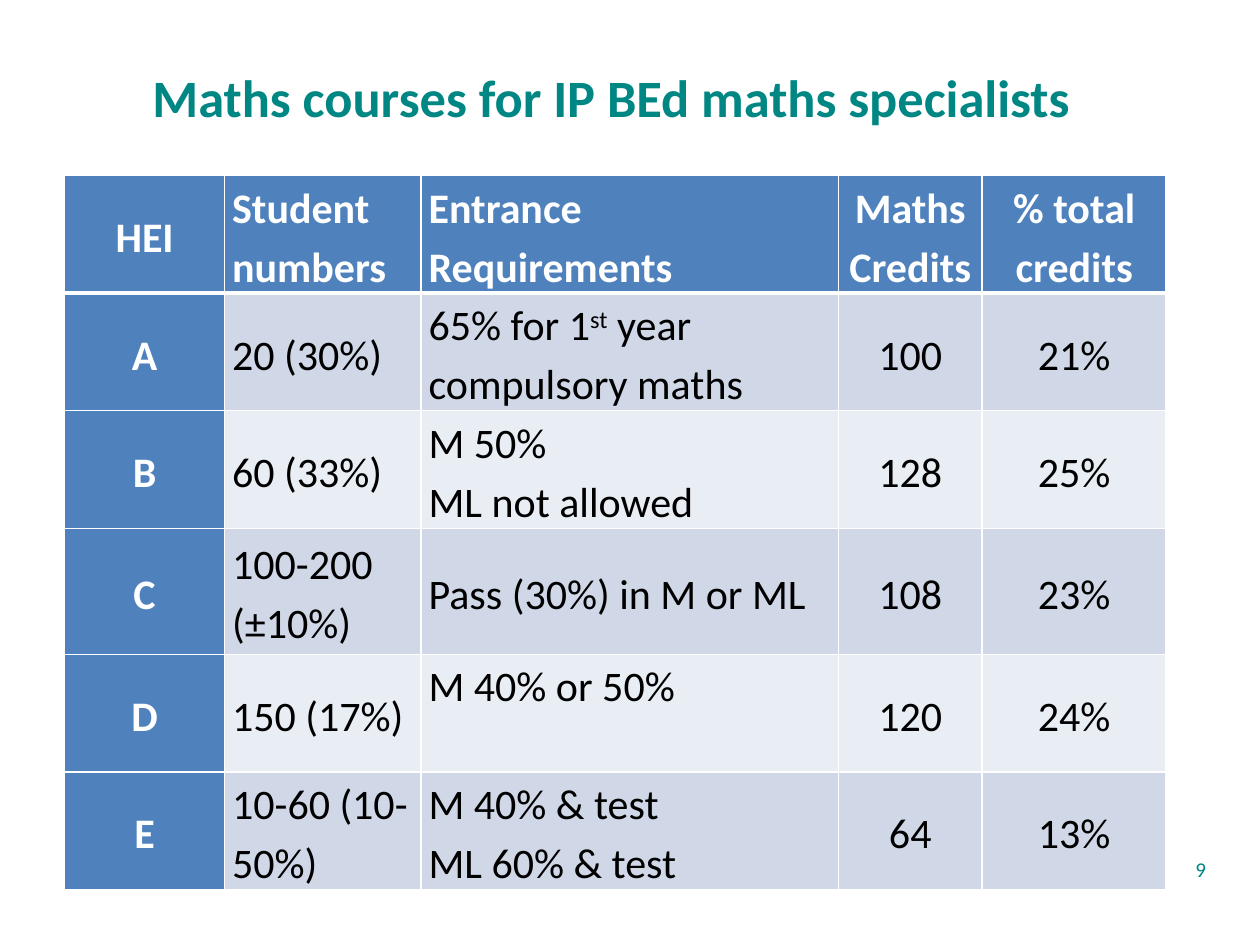
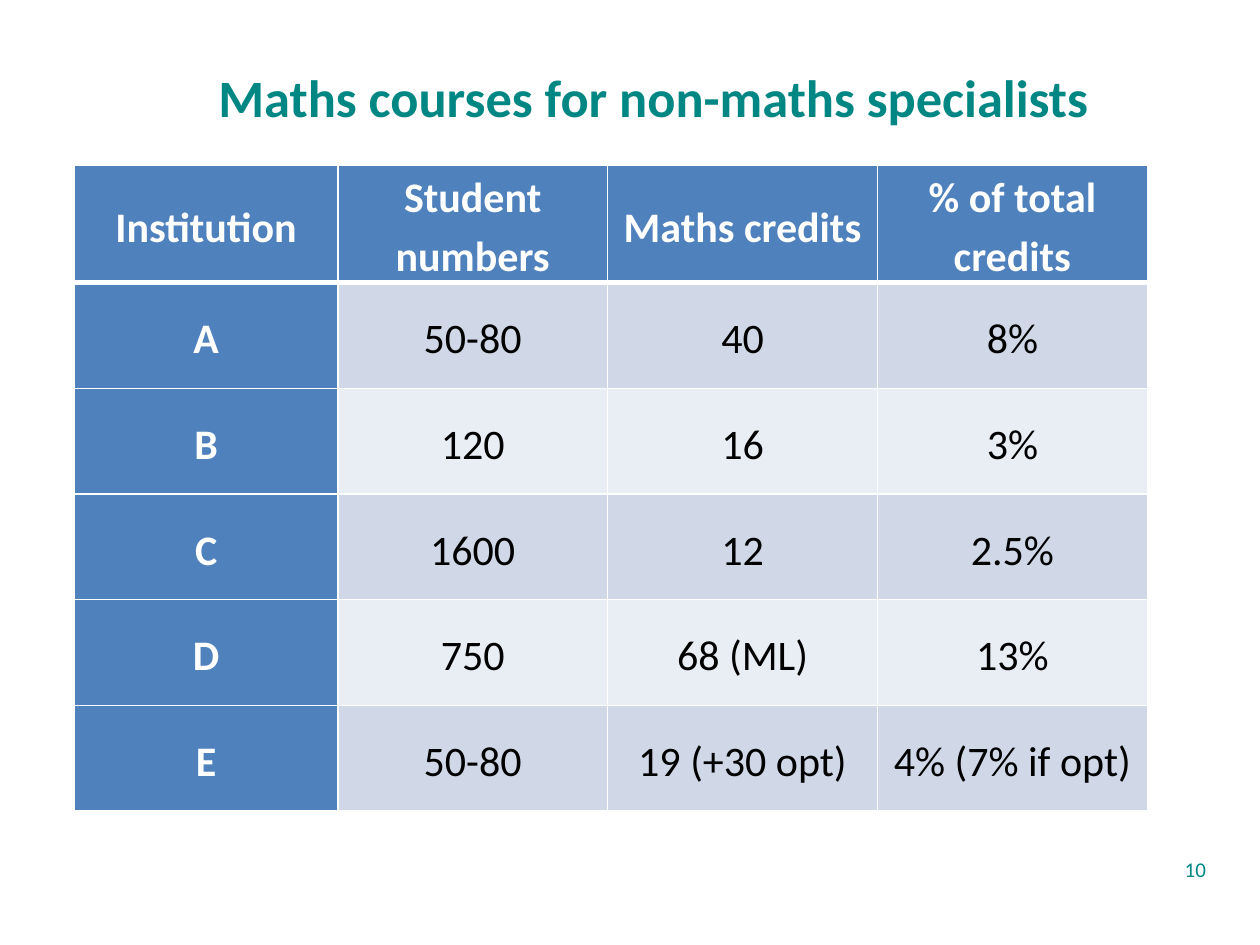
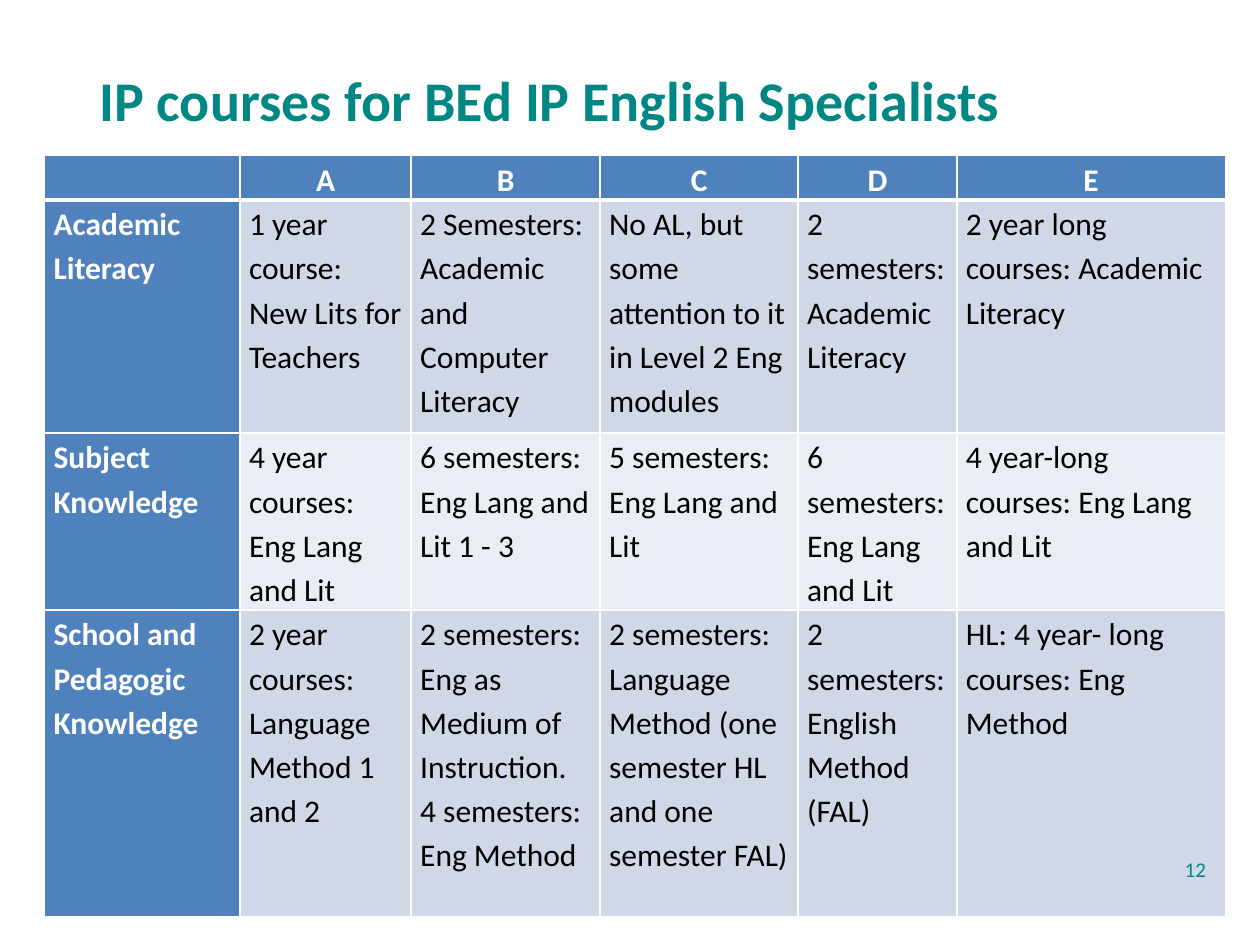
from lxml import etree
from pptx import Presentation
from pptx.dml.color import RGBColor
from pptx.enum import text
from pptx.oxml import ns
from pptx.util import Cm, Pt

FONT = "Calibri"
TEAL, BLUE, WHITE, BLACK = "008784", "4F81BD", "FFFFFF", "000000"
BANDS = ["D0D8E8", "E9EDF4"]
ALIGN = {"l": text.PP_ALIGN.LEFT, "c": text.PP_ALIGN.CENTER, "r": text.PP_ALIGN.RIGHT}
TOP, MIDDLE = text.MSO_ANCHOR.TOP, text.MSO_ANCHOR.MIDDLE


def color(value):
    return RGBColor.from_string(value)


def add_run(p, content, size, fill, bold=False):
    r = p.add_run()
    r.text = content
    r.font.name, r.font.size, r.font.bold = FONT, Pt(size), bold
    r.font.color.rgb = color(fill)
    return r


def add_title(s, content, width, size=30, align="c"):
    sp = s.shapes.title
    sp.left, sp.top, sp.width, sp.height = Cm(1.75), Cm(1.19), Cm(width), Cm(1.55)
    tf = sp.text_frame
    tf.word_wrap = True
    tf.auto_size = text.MSO_AUTO_SIZE.SHAPE_TO_FIT_TEXT
    tf.vertical_anchor = TOP
    p = tf.paragraphs[0]
    p.alignment = ALIGN[align]
    add_run(p, content, size, TEAL, True)


def add_page_number(s, number):
    tf = s.shapes.add_textbox(Cm(18.64), Cm(17.15), Cm(5.92), Cm(0.76)).text_frame
    tf.word_wrap = True
    tf.vertical_anchor = MIDDLE
    p = tf.paragraphs[0]
    p.alignment = ALIGN["r"]
    add_run(p, str(number), 12, TEAL)


def set_borders(cell, top, bottom):
    """Draw white cell borders; top and bottom are widths in points."""
    tcPr = cell._tc.get_or_add_tcPr()
    for side, width in (("L", 1), ("R", 1), ("T", top), ("B", bottom)):
        ln = etree.SubElement(tcPr, ns.qn(f"a:ln{side}"), w=str(Pt(width)))
        fill = etree.SubElement(ln, ns.qn("a:solidFill"))
        etree.SubElement(fill, ns.qn("a:srgbClr"), val=WHITE)


def fill_cell(cell, content, size, ink, bold, align):
    """Write lines as paragraphs; text between ^ marks is superscript."""
    tf = cell.text_frame
    for i, line in enumerate(content.split("\n")):
        p = tf.add_paragraph() if i else tf.paragraphs[0]
        p.alignment, p.line_spacing = ALIGN[align], 1.15
        p.font.size = Pt(size)
        for j, part in enumerate(line.split("^")):
            if part:
                r = add_run(p, part, size, ink, bold)
                if j % 2:
                    r.font._element.set("baseline", "30000")


def add_grid(s, left, top, widths, heights, rows, aligns, header_aligns=None,
             size=24, inset=0.18, anchor=MIDDLE):
    """Add a table with a blue header row and column and banded body rows."""
    table = s.shapes.add_table(len(rows), len(widths), Cm(left), Cm(top),
                               Cm(sum(widths)), Cm(sum(heights))).table
    table.first_col = True
    for column, width in zip(table.columns, widths):
        column.width = Cm(width)
    for row, height in zip(table.rows, heights):
        row.height = Cm(height)
    for i, row in enumerate(rows):
        row_aligns = aligns if i else header_aligns or aligns
        for j, content in enumerate(row):
            cell = table.cell(i, j)
            heading = i == 0 or j == 0
            cell.margin_left = cell.margin_right = Cm(inset)
            cell.margin_top = cell.margin_bottom = 0
            cell.vertical_anchor = anchor
            set_borders(cell, 3 if i == 1 else 1, 3 if i == 0 else 1)
            cell.fill.solid()
            cell.fill.fore_color.rgb = color(BLUE if heading else BANDS[(i - 1) % 2])
            fill_cell(cell, content, size, WHITE if heading else BLACK, heading, row_aligns[j])
    return table


def specialists_slide(s):
    add_title(s, "Maths courses for IP BEd maths specialists", 21.16)
    rows = [
        ["HEI", "Student numbers", "Entrance Requirements", "Maths Credits", "% total credits"],
        ["A", "20 (30%)", "65% for 1^st^ year compulsory maths", "100", "21%"],
        ["B", "60 (33%)", "M 50%\nML not allowed", "128", "25%"],
        ["C", "100-200 (±10%)", "Pass (30%) in M or ML", "108", "23%"],
        ["D", "150 (17%)", "M 40% or 50%", "120", "24%"],
        ["E", "10-60 (10-50%)", "M 40% & test\nML 60% & test", "64", "13%"],
    ]
    table = add_grid(s, 1.3, 3.54, [3.23, 3.96, 8.41, 2.9, 3.71],
                     [2.37, 2.37, 2.37, 2.54, 2.37, 2.37], rows, "cllcc", inset=0.15)
    table.cell(4, 2).vertical_anchor = TOP
    add_page_number(s, 9)


def non_specialists_slide(s):
    add_title(s, "Maths courses for non-maths specialists", 22.86)
    rows = [
        ["Institution", "Student numbers", "Maths credits", "% of total credits"],
        ["A", "50-80", "40", "8%"],
        ["B", "120", "16", "3%"],
        ["C", "1600", "12", "2.5%"],
        ["D", "750", "68 (ML)", "13%"],
        ["E", "50-80", "19 (+30 opt)", "4% (7% if opt)"],
    ]
    add_grid(s, 1.5, 3.33, [5.31] + [5.44] * 3, [2.37] + [2.13] * 5, rows, "cccc")
    add_page_number(s, 10)


def english_slide(s):
    add_title(s, "IP courses for BEd IP English Specialists", 22.86, 32, "l")
    rows = [
        ["", "A", "B", "C", "D", "E"],
        ["Academic Literacy", "1 year course: New Lits for Teachers",
         "2 Semesters:\nAcademic and Computer Literacy",
         "No AL, but some attention to it in Level 2 Eng modules",
         "2 semesters: Academic Literacy", "2 year long courses: Academic Literacy"],
        ["Subject Knowledge", "4 year courses: Eng Lang and Lit",
         "6 semesters: Eng Lang and Lit 1 - 3", "5 semesters: Eng Lang and Lit",
         "6 semesters: Eng Lang and Lit", "4 year-long courses: Eng Lang and Lit"],
        ["School and Pedagogic Knowledge", "2 year courses: Language Method 1 and 2",
         "2 semesters: Eng as Medium of Instruction.\n4 semesters: Eng Method",
         "2 semesters: Language Method (one semester HL and one semester FAL)",
         "2 semesters: English Method (FAL)", "HL: 4 year- long courses: Eng Method"],
    ]
    add_grid(s, 0.9, 3.13, [3.94, 3.45, 3.81, 3.99, 3.2, 5.41], [0.9, 4.7, 3.57, 6.18],
             rows, "llllll", "cccccc", size=18, anchor=TOP)
    add_page_number(s, 12)


def main():
    prs = Presentation()
    prs.slide_width, prs.slide_height = Cm(25.4), Cm(19.05)
    for build in (specialists_slide, non_specialists_slide, english_slide):
        build(prs.slides.add_slide(prs.slide_layouts[5]))
    prs.save("out.pptx")


if __name__ == "__main__":
    main()
